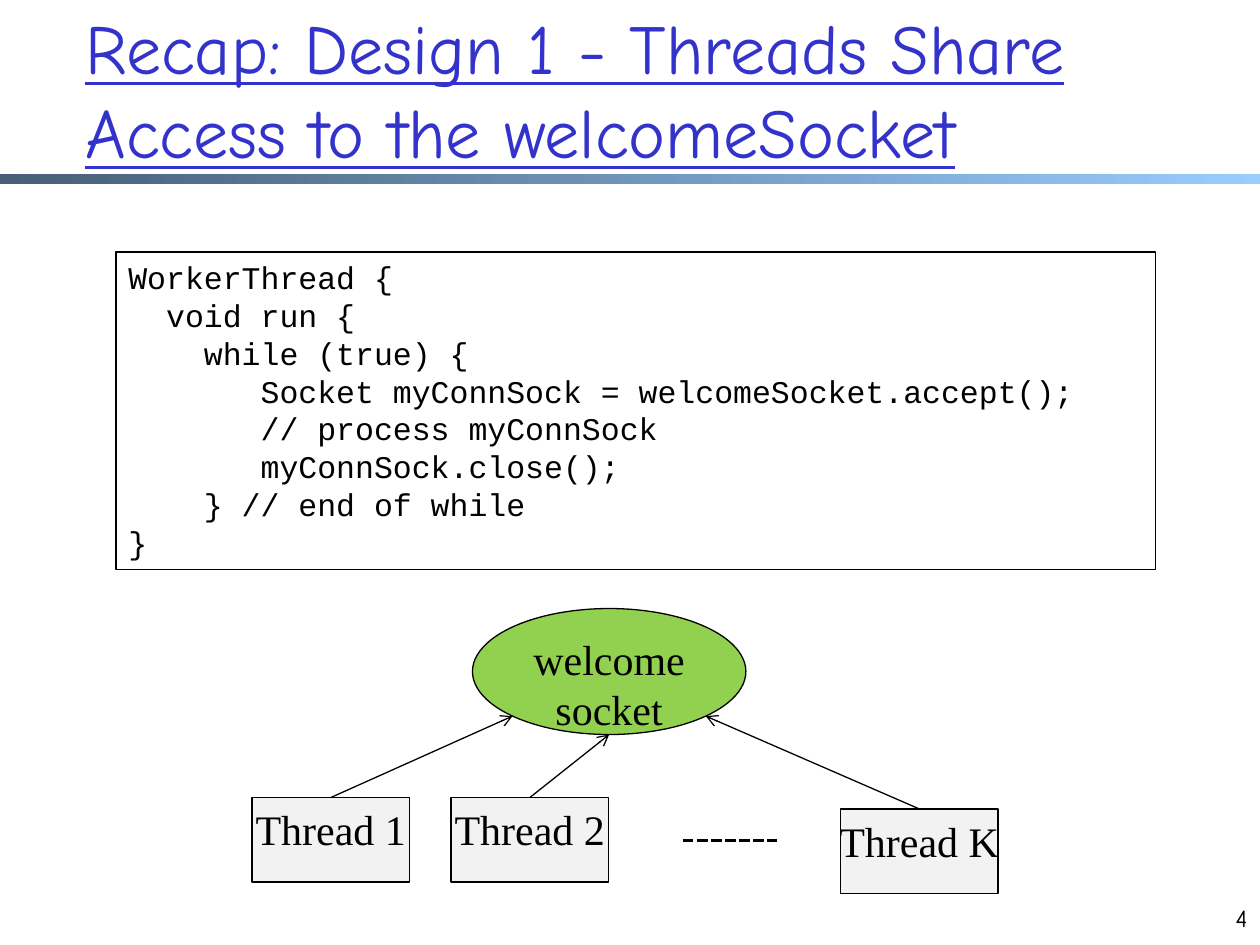
from math import cos, radians, sin

from lxml import etree
from pptx import Presentation
from pptx.dml.color import RGBColor
from pptx.enum.dml import MSO_LINE
from pptx.enum.shapes import MSO_CONNECTOR, MSO_SHAPE
from pptx.enum.text import MSO_ANCHOR, PP_ALIGN
from pptx.oxml.ns import qn
from pptx.util import Inches, Pt

RECT, OVAL = MSO_SHAPE.RECTANGLE, MSO_SHAPE.OVAL
STRAIGHT, SYS_DASH = MSO_CONNECTOR.STRAIGHT, MSO_LINE.SQUARE_DOT
LEFT, CENTER, RIGHT = PP_ALIGN.LEFT, PP_ALIGN.CENTER, PP_ALIGN.RIGHT
TOP, MIDDLE = MSO_ANCHOR.TOP, MSO_ANCHOR.MIDDLE

COLORS = {"black": "000000", "title": "3333CC", "socket": "92D050",
          "thread": "F2F2F2", "bar_start": "475E76", "bar_end": "99CCFF"}
HEAD, CODE, LABEL = "Comic Neue", "Courier New", "Times New Roman"

# Content
TITLE = "Recap: Design 1 - Threads Share Access to the welcomeSocket"
PAGE = "4"
CODE_LINES = [  # (indent in characters, text)
    (0, "WorkerThread {"),
    (2, "void run {"),
    (4, "while (true) {"),
    (7, "Socket myConnSock = welcomeSocket.accept();"),
    (7, "// process myConnSock"),
    (7, "myConnSock.close();"),
    (4, "} // end of while"),
    (0, "}"),
]
CHAR_WIDTH = 0.15  # one 18 pt Courier New character, inches
SOCKET = "welcome\vsocket"
SOCKET_BOX = (3.75, 4.83, 2.17, 1)
THREAD_SIZE = (1.25, 0.67)
THREADS = [  # label, left, top, angle where its arrow meets the socket
    ("Thread 1", 2, 6.33, 135),
    ("Thread 2", 3.58, 6.33, 90),
    ("Thread K", 6.67, 6.42, 45),
]


def rgb(name):
    return RGBColor.from_string(COLORS[name])


def write(sp, lines, font, size, color="black", align=LEFT, anchor=TOP,
          underline=False, wrap=True):
    """Fill a shape with (indent, text) lines, or with one plain string."""
    tf = sp.text_frame
    tf.word_wrap, tf.vertical_anchor = wrap, anchor
    if isinstance(lines, str):
        lines = [(0, lines)]
    for i, (indent, text) in enumerate(lines):
        p = tf.paragraphs[0] if i == 0 else tf.add_paragraph()
        p.text, p.alignment = text, align
        if indent:
            pPr = p._p.get_or_add_pPr()
            pPr.set("marL", str(Inches(indent * CHAR_WIDTH)))
            pPr.set("indent", "0")
        for r in p.runs:
            r.font.name, r.font.size = font, Pt(size)
            r.font.color.rgb = rgb(color)
            r.font.underline = underline


def add_text(box, text, **fmt):
    write(slide.shapes.add_textbox(*map(Inches, box)), text, **fmt)


def add_box(kind, box, fill=None):
    sp = slide.shapes.add_shape(kind, *map(Inches, box))
    sp.shadow.inherit = False
    if fill:
        sp.fill.solid()
        sp.fill.fore_color.rgb = rgb(fill)
    else:
        sp.fill.background()
    sp.line.color.rgb, sp.line.width = rgb("black"), Pt(0.75)
    return sp


def add_line(start, end, width=0.75, arrow=False, dash=None):
    line = slide.shapes.add_connector(STRAIGHT, *map(Inches, start + end))
    line.line.color.rgb, line.line.width = rgb("black"), Pt(width)
    if dash:
        line.line.dash_style = dash
    if arrow:
        etree.SubElement(line.line._get_or_add_ln(), qn("a:tailEnd"), type="arrow")
    etree.SubElement(line._element.spPr, qn("a:effectLst"))


prs = Presentation()
prs.slide_width, prs.slide_height = Inches(10), Inches(7.5)
slide = prs.slides.add_slide(prs.slide_layouts[6])

# Gradient bar under the title
bar = add_box(RECT, (0, 1.38, 10, 0.08))
bar.line.fill.background()
bar.fill.gradient()
bar.fill.gradient_angle = 0
for stop, position, name in zip(bar.fill.gradient_stops, (0, 1),
                                ("bar_start", "bar_end")):
    stop.position, stop.color.rgb = position, rgb(name)

# Title and page number
add_text((0.58, 0.08, 8.92, 1.25), TITLE, font=HEAD, size=40, color="title",
         anchor=MIDDLE, underline=True)
add_text((9.5, 7.12, 0.5, 0.5), PAGE, font=HEAD, size=14, align=RIGHT)

# Worker thread code
write(add_box(RECT, (0.92, 2, 8.25, 2.52)), CODE_LINES, font=CODE, size=18)

# Shared socket
label = dict(font=LABEL, size=24, align=CENTER, wrap=False)
write(add_box(OVAL, SOCKET_BOX, "socket"), SOCKET, **label)

# Threads, each with an arrow from its top to the edge of the socket
x, y, w, h = SOCKET_BOX
for text, left, top, angle in THREADS:
    write(add_box(RECT, (left, top) + THREAD_SIZE, "thread"), text, **label)
    a = radians(angle)
    edge = (x + w / 2 * (1 + cos(a)), y + h / 2 * (1 + sin(a)))
    add_line((left + THREAD_SIZE[0] / 2, top), edge, arrow=True)

# Dashes for the threads in between
add_line((5.42, 6.67), (6.17, 6.67), width=2, dash=SYS_DASH)

prs.save("out.pptx")
